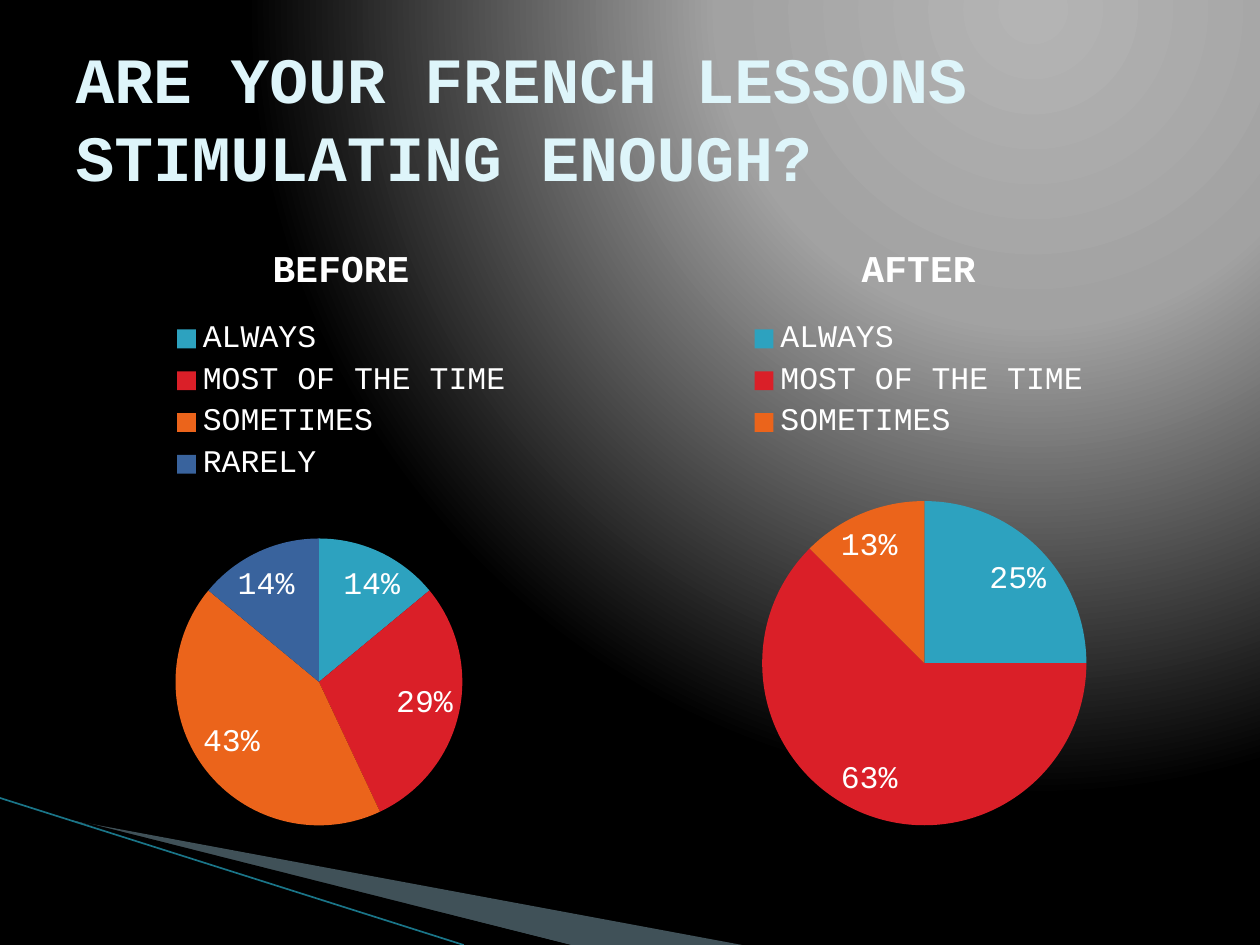
import pptx
import pptx.chart.data
import pptx.dml.color
import pptx.enum.chart
import pptx.enum.shapes
import pptx.enum.text
import pptx.oxml
import pptx.oxml.ns
import pptx.util
from dataclasses import dataclass

Pt = pptx.util.Pt
NAMESPACES = pptx.oxml.ns.nsdecls("a", "p")


@dataclass(frozen=True)
class Theme:
    font: str = "Courier New"
    heading: str = "DEF5FA"
    text: str = "FFFFFF"
    wedge: str = "A0CBDC"
    shade: str = "000000"
    rule: str = "1A7588"
    slices: tuple = ("2DA2BF", "DA1F28", "EB641B", "39639D")
    glow: tuple = ((0, "B4B4B4"), (40, "A2A2A2"), (100, "000000"))
    title_size: float = 36.9
    chart_title_size: float = 21.6
    chart_size: float = 18


def rgb(value):
    return pptx.dml.color.RGBColor.from_string(value)


class SlideBuilder:
    def __init__(self, page, theme):
        self.page = page
        self.theme = theme

    def style_font(self, font, size, color, bold=False):
        font.name = self.theme.font
        font.size = Pt(size)
        font.bold = bold
        font.color.rgb = rgb(color)

    def background(self):
        stops = "".join(
            f'<a:gs pos="{position * 1000}"><a:srgbClr val="{color}"/></a:gs>'
            for position, color in self.theme.glow)
        back = pptx.oxml.parse_xml(
            f'<p:bg {NAMESPACES}><p:bgPr><a:gradFill rotWithShape="1">'
            f'<a:gsLst>{stops}</a:gsLst><a:path path="circle">'
            '<a:fillToRect l="65000" t="0" r="0" b="98000"/></a:path>'
            '</a:gradFill><a:effectLst/></p:bgPr></p:bg>')
        self.page._element.cSld.insert(0, back)

    def wedge(self, points, color, opacity=100):
        builder = self.page.shapes.build_freeform(
            Pt(points[0][0]), Pt(points[0][1]), scale=1.0)
        builder.add_line_segments([(Pt(x), Pt(y)) for x, y in points[1:]])
        shape = builder.convert_to_shape()
        shape.shadow.inherit = False
        shape.line.fill.background()
        shape.fill.solid()
        shape.fill.fore_color.rgb = rgb(color)
        if opacity < 100:
            fill_color = shape._element.spPr.find(".//" + pptx.oxml.ns.qn("a:srgbClr"))
            fill_color.append(pptx.oxml.parse_xml(
                f'<a:alpha {NAMESPACES} val="{opacity * 1000}"/>'))

    def rule(self, start, end):
        line = self.page.shapes.add_connector(
            pptx.enum.shapes.MSO_CONNECTOR.STRAIGHT, *map(Pt, start + end))
        line.line.color.rgb = rgb(self.theme.rule)
        line.line.width = Pt(0.95)
        line._element.spPr.append(pptx.oxml.parse_xml(f"<a:effectLst {NAMESPACES}/>"))

    def title(self, text, left, top, width, height):
        box = self.page.shapes.title
        box.left, box.top, box.width, box.height = map(Pt, (left, top, width, height))
        frame = box.text_frame
        frame.word_wrap = True
        frame.auto_size = pptx.enum.text.MSO_AUTO_SIZE.NONE
        frame.vertical_anchor = pptx.enum.text.MSO_ANCHOR.MIDDLE
        para = frame.paragraphs[0]
        para.alignment = pptx.enum.text.PP_ALIGN.LEFT
        span = para.add_run()
        span.text = text
        self.style_font(span.font, self.theme.title_size, self.theme.heading, True)
        # Keep the title in front of the decoration
        self.page.shapes._spTree.append(box._element)

    def pie(self, heading, answers, left, top, width, height, plot):
        theme = self.theme
        data = pptx.chart.data.CategoryChartData()
        data.categories = list(answers)
        data.add_series("Series 1", list(answers.values()))
        chart = self.page.shapes.add_chart(
            pptx.enum.chart.XL_CHART_TYPE.PIE,
            *map(Pt, (left, top, width, height)), data).chart
        self.style_font(chart.font, theme.chart_size, theme.text)

        # Heading and legend
        chart.has_title = True
        span = chart.chart_title.text_frame.paragraphs[0].add_run()
        span.text = heading
        self.style_font(span.font, theme.chart_title_size, theme.text, True)
        chart.chart_title.include_in_layout = False
        chart.has_legend = True
        chart.legend.position = pptx.enum.chart.XL_LEGEND_POSITION.TOP
        chart.legend.include_in_layout = False
        self.style_font(chart.legend.font, theme.chart_size, theme.text)

        # Slices and their percentages
        pie_plot = chart.plots[0]
        pie_plot.vary_by_categories = True
        for index in range(len(answers)):
            fill = pie_plot.series[0].points[index].format.fill
            fill.solid()
            fill.fore_color.rgb = rgb(theme.slices[index])
        pie_plot.has_data_labels = True
        labels = pie_plot.data_labels
        labels.show_percentage = True
        labels.show_value = False
        labels.number_format = "0%"
        labels.number_format_is_linked = False
        labels.position = pptx.enum.chart.XL_LABEL_POSITION.BEST_FIT
        self.style_font(labels.font, theme.chart_size, theme.text)
        self.place_plot(chart, plot)

    def place_plot(self, chart, plot):
        area = chart._chartSpace.chart.plotArea
        for old in area.findall(pptx.oxml.ns.qn("c:layout")):
            area.remove(old)
        places = "".join(f'<c:{name} val="{value}"/>' for name, value in zip("xywh", plot))
        area.insert(0, pptx.oxml.parse_xml(
            f'<c:layout {pptx.oxml.ns.nsdecls("c")}><c:manualLayout>'
            '<c:layoutTarget val="inner"/><c:xMode val="edge"/><c:yMode val="edge"/>'
            f'{places}</c:manualLayout></c:layout>'))


def main():
    theme = Theme()
    deck = pptx.Presentation()
    deck.slide_width, deck.slide_height = Pt(720), Pt(540)
    slide = SlideBuilder(deck.slides.add_slide(deck.slide_layouts[5]), theme)

    # Backdrop and corner decoration
    slide.background()
    slide.wedge([(39.6, 468.5), (424, 540), (326, 540)], theme.wedge, opacity=40)
    slide.wedge([(38.2, 467.3), (326, 540), (267, 540)], theme.shade)
    slide.rule((0, 456), (265, 540))

    slide.title("ARE YOUR FRENCH LESSONS STIMULATING ENOUGH?", 36, 21.6, 648, 90)

    # Survey results side by side
    names = ("ALWAYS", "MOST OF THE TIME", "SOMETIMES", "RARELY")
    surveys = (
        ("BEFORE", (14, 29, 43, 14), (0.2, 0.51, 0.52, 0.46)),
        ("AFTER", (24, 60, 12), (0.21, 0.45, 0.6, 0.52)),
    )
    width, gap = 318, 12
    for column, (heading, values, plot) in enumerate(surveys):
        slide.pie(heading, dict(zip(names, values)),
                  36 + column * (width + gap), 126, width, 356.4, plot)

    deck.save("out.pptx")


if __name__ == "__main__":
    main()
